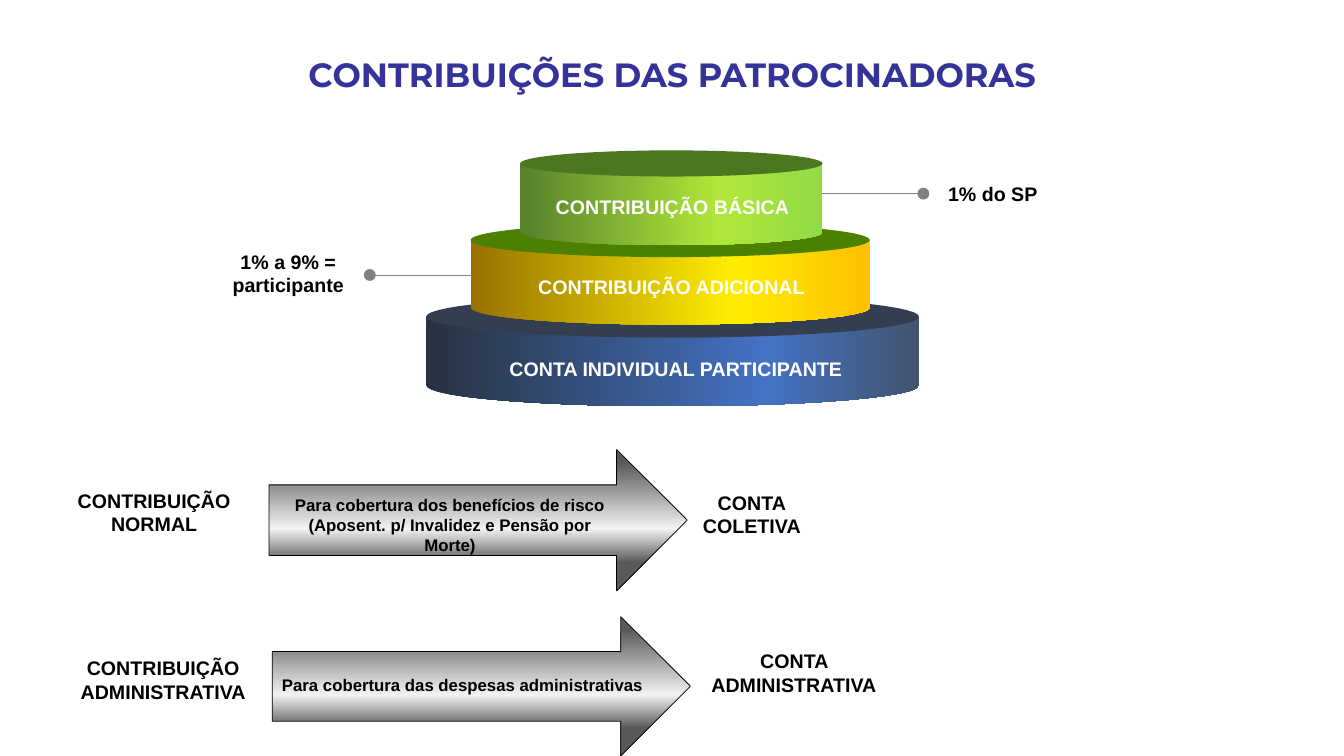
import math

from lxml import etree
from pptx import Presentation
from pptx import util as u
from pptx.dml import color
from pptx.enum import shapes, text
from pptx.oxml import ns

BLACK, WHITE, GREY, NAVY = "000000", "FFFFFF", "808080", "333399"
METAL = [(9, "595959"), (56, "F2F2F2"), (80, "595959")]


def rgb(value):
    return color.RGBColor.from_string(value)


class Painter:
    """Draws styled elements on the current slide; lengths are centimetres."""

    font = "Arial"

    def __init__(self, page):
        self.page = page
        self.target = page.shapes

    def group(self):
        self.target = self.page.shapes.add_group_shape().shapes

    def ungroup(self):
        self.target = self.page.shapes

    def set_text(self, box, lines, size, ink, font=None, align=text.PP_ALIGN.CENTER, wrap=True):
        frame = box.text_frame
        frame.word_wrap = wrap
        frame.auto_size = text.MSO_AUTO_SIZE.NONE
        frame.vertical_anchor = text.MSO_ANCHOR.TOP
        for number, line in enumerate(lines):
            para = frame.add_paragraph() if number else frame.paragraphs[0]
            para.alignment = align
            span = para.add_run()
            span.text = line
            span.font.name = font or self.font
            span.font.size = u.Pt(size)
            span.font.bold = True
            span.font.color.rgb = rgb(ink)

    def title(self, left, top, width, height, line):
        box = self.page.shapes.title
        box.left, box.top, box.width, box.height = map(u.Cm, (left, top, width, height))
        self.set_text(box, [line], 24, NAVY, "Montserrat", text.PP_ALIGN.LEFT)

    def label(self, left, top, width, height, *lines, size=14, ink=BLACK, wrap=True):
        box = self.target.add_textbox(*map(u.Cm, (left, top, width, height)))
        self.set_text(box, lines, size, ink, wrap=wrap)

    def paint(self, shape, fill, angle=0, line=None):
        """Fill with a hex colour, or with a list of (percent, hex) stops."""
        shape.shadow.inherit = False
        shape.fill.solid()
        if isinstance(fill, str):
            shape.fill.fore_color.rgb = rgb(fill)
        else:
            solid = shape._element.spPr.find(ns.qn("a:solidFill"))
            gradient = etree.Element(ns.qn("a:gradFill"), rotWithShape="1")
            stops = etree.SubElement(gradient, ns.qn("a:gsLst"))
            for percent, value in fill:
                stop = etree.SubElement(stops, ns.qn("a:gs"), pos=str(percent * 1000))
                etree.SubElement(stop, ns.qn("a:srgbClr"), val=value)
            etree.SubElement(gradient, ns.qn("a:lin"), ang=str(angle * 60000), scaled="0")
            solid.getparent().replace(solid, gradient)
        if line:
            shape.line.color.rgb = rgb(line)
            shape.line.width = u.Pt(0.5)
        else:
            shape.line.fill.background()

    def preset(self, kind, left, top, width, height, fill, angle=0, line=None):
        shape = self.target.add_shape(kind, *map(u.Cm, (left, top, width, height)))
        self.paint(shape, fill, angle, line)

    def outline(self, points, fill):
        points = [(u.Cm(x), u.Cm(y)) for x, y in points]
        builder = self.target.build_freeform(*points[0])
        builder.add_line_segments(points[1:], close=True)
        self.paint(builder.convert_to_shape(), fill)

    def drum(self, left, width, rim, bulge, drop, side, lid):
        """A cylinder: a side with a curved foot, and an elliptical lid."""
        def arc(level, end):
            radius = width / 2
            return [(left + radius + radius * math.cos(math.radians(a)),
                     level + bulge * math.sin(math.radians(a)))
                    for a in range(0, end, 6)]

        self.outline([(left, rim), (left + width, rim)] + arc(rim + drop, 186), side)
        self.outline(arc(rim, 360), lid)

    def callout(self, start, end, y):
        self.group()
        line = self.target.add_connector(
            shapes.MSO_CONNECTOR.STRAIGHT, *map(u.Cm, (start, y, end, y)))
        line.line.color.rgb = rgb(GREY)
        line.line.width = u.Pt(0.5)
        etree.SubElement(line._element.spPr, ns.qn("a:effectLst"))
        self.preset(shapes.MSO_SHAPE.OVAL, end - 0.15, y - 0.15, 0.3, 0.3, GREY)
        self.ungroup()

    def arrow(self, left, top, width, height):
        self.preset(shapes.MSO_SHAPE.RIGHT_ARROW, left, top, width, height, METAL, 90, BLACK)


def main():
    deck = Presentation()
    deck.slide_width, deck.slide_height = u.Cm(33.87), u.Cm(19.05)
    page = deck.slides.add_slide(deck.slide_layouts[5])
    draw = Painter(page)
    draw.title(7.52, 1.24, 19.81, 1.27, "CONTRIBUIÇÕES DAS PATROCINADORAS")

    # Callouts beside the tiers
    draw.label(23.24, 4.47, 3.56, 0.86, "1% do SP")
    draw.callout(20.65, 23.27, 4.88)
    draw.label(4.7, 6.17, 5.13, 1.45, "1% a 9% = participante")
    draw.callout(11.94, 9.32, 6.93)

    # Stacked tiers, bottom to top
    tiers = [
        (10.74, 12.42, 7.98, 0.53, 1.73, [(0, "273240"), (69, "4472C4"), (100, "41546D")], "333F50"),
        (11.86, 10.06, 6.05, 0.43, 1.7, [(0, "977200"), (66, "FFED01"), (100, "FFC000")], "4B8000"),
        (13.11, 7.62, 4.12, 0.33, 1.73, [(0, "57812A"), (66, "B1E739"), (100, "92DA46")], "4D7620"),
    ]
    tier_labels = [
        (13.66, 4.78, 6.58, "CONTRIBUIÇÃO BÁSICA"),
        (13.28, 6.81, 7.29, "CONTRIBUIÇÃO ADICIONAL"),
        (12.55, 8.86, 8.97, "CONTA INDIVIDUAL PARTICIPANTE"),
    ]
    draw.group()
    for tier in tiers:
        draw.drum(*tier)
    for left, top, width, name in tier_labels:
        draw.label(left, top, width, 0.86, name, ink=WHITE, wrap=False)
    draw.ungroup()

    # Normal contribution
    draw.label(1.32, 12.19, 5.13, 1.8, "CONTRIBUIÇÃO NORMAL")
    draw.arrow(6.78, 11.33, 10.54, 3.56)
    draw.label(6.83, 12.34, 9.02, 1.8, "Para cobertura dos benefícios de risco",
               "(Aposent. p/ Invalidez e Pensão por Morte)", size=12)
    draw.label(17.17, 12.24, 3.56, 1.45, "CONTA", "COLETIVA")

    # Administrative contribution
    draw.label(1.55, 16.41, 5.13, 1.45, "CONTRIBUIÇÃO ADMINISTRATIVA")
    draw.arrow(6.86, 15.54, 10.54, 3.51)
    draw.label(6.81, 16.89, 9.7, 0.76, "Para cobertura das despesas administrativas", size=12)
    draw.label(17.32, 16.23, 5.38, 1.45, "CONTA ADMINISTRATIVA")

    deck.save("out.pptx")


if __name__ == "__main__":
    main()
